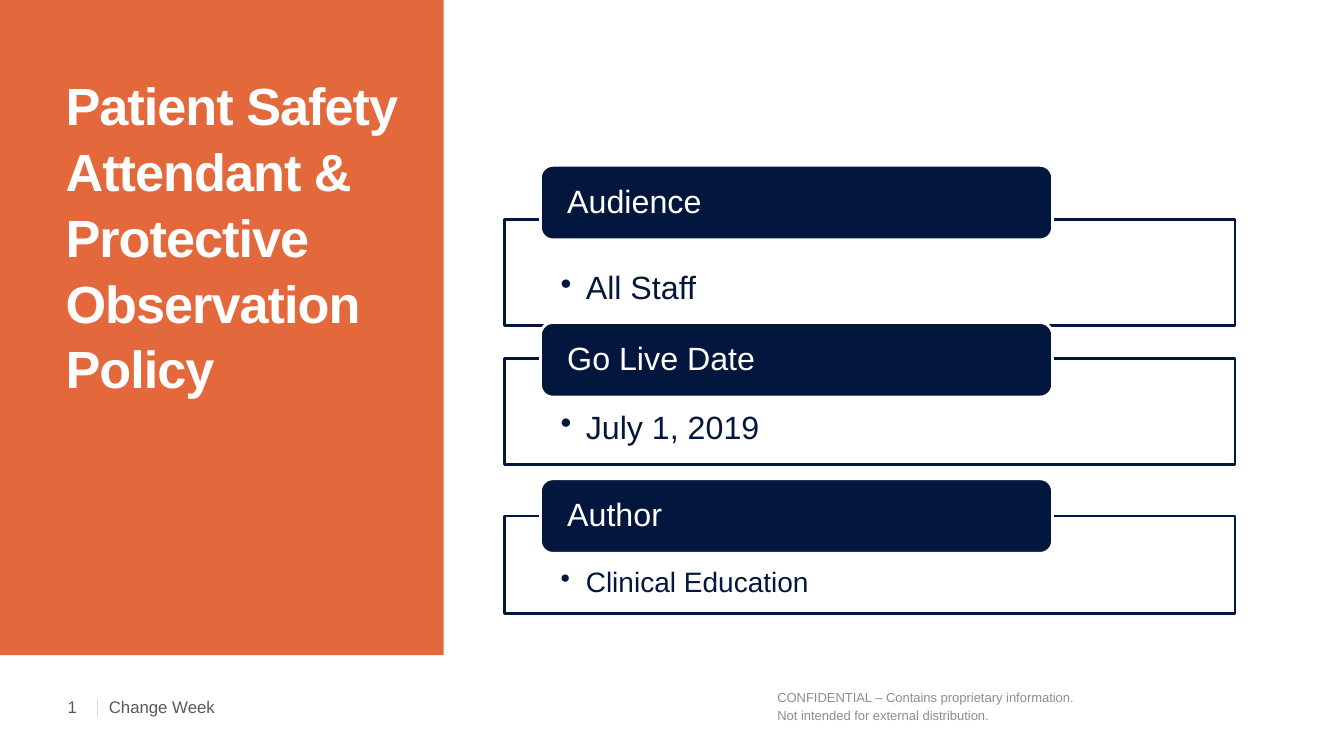
from lxml import etree
from pptx import Presentation
from pptx.dml.color import RGBColor
from pptx.enum.shapes import MSO_CONNECTOR, MSO_SHAPE
from pptx.enum.text import MSO_ANCHOR, MSO_AUTO_SIZE, PP_ALIGN
from pptx.oxml.ns import qn
from pptx.util import Emu, Pt

RECTANGLE, ROUNDED = MSO_SHAPE.RECTANGLE, MSO_SHAPE.ROUNDED_RECTANGLE
STRAIGHT = MSO_CONNECTOR.STRAIGHT
TOP, MIDDLE = MSO_ANCHOR.TOP, MSO_ANCHOR.MIDDLE
LEFT, NO_FIT = PP_ALIGN.LEFT, MSO_AUTO_SIZE.NONE

PX = 9144  # 100 px to the inch
THEME = {
    "font": "Arial",
    "navy": RGBColor(0x03, 0x17, 0x3E),
    "orange": RGBColor(0xE0, 0x59, 0x29),
    "white": RGBColor(0xFF, 0xFF, 0xFF),
    "rule": RGBColor(0xD9, 0xD9, 0xD6),
    "footer": RGBColor(0x58, 0x59, 0x5B),
    "notice": RGBColor(0x8C, 0x8D, 0x8D),
    "title_size": 37.3,
    "card_size": 23,
    "small_card_size": 20,
    "footer_size": 12,
    "notice_size": 9.3,
}


def add_block(shape_type, place, fill, line=None, opacity=100):
    block = slide.shapes.add_shape(shape_type, *(Emu(n * PX) for n in place))
    block.shadow.inherit = False
    block.fill.solid()
    block.fill.fore_color.rgb = THEME[fill]
    if opacity < 100:
        color = block.fill._xPr.find(".//" + qn("a:srgbClr"))
        etree.SubElement(color, qn("a:alpha"), val=str(opacity * 1000))
    if line:
        block.line.color.rgb = THEME[line]
        block.line.width = Pt(2)
    else:
        block.line.fill.background()
    return block


def write(box, lines, size, color, insets=(0, 0, 0, 0), anchor=TOP,
          spacing=1.0, wrap=True, bold=None, bullet=False):
    frame = box.text_frame
    frame.auto_size = NO_FIT
    frame.word_wrap = wrap
    frame.vertical_anchor = anchor
    (frame.margin_left, frame.margin_top,
     frame.margin_right, frame.margin_bottom) = (Emu(n * PX) for n in insets)
    frame.text = "\n".join(lines)
    for para in frame.paragraphs:
        para.alignment = LEFT
        para.line_spacing = spacing
        if bullet:
            properties = para._p.get_or_add_pPr()
            properties.set("marL", str(25 * PX))
            properties.set("indent", str(-25 * PX))
            etree.SubElement(properties, qn("a:buChar"), char="•")
        para.font.name = THEME["font"]
        para.font.size = Pt(THEME[size])
        para.font.color.rgb = THEME[color]
        para.font.bold = bold


deck = Presentation()
deck.slide_width, deck.slide_height = Emu(1333 * PX), Emu(750 * PX)
slide = deck.slides.add_slide(deck.slide_layouts[5])

# Orange panel with the title in front of it
add_block(RECTANGLE, (0, 0, 440, 650), "orange", opacity=90)
title = slide.shapes.title
title.left, title.top, title.width, title.height = (
    Emu(n * PX) for n in (65, 70, 342, 570))
write(title, ["Patient Safety Attendant & Protective Observation Policy"],
      "title_size", "white", spacing=1.05, bold=True)
for span in title.text_frame.paragraphs[0].runs:
    span.font._element.set("spc", "-70")
slide.shapes._spTree.append(title._element)

# Cards: outlined body with a heading tab over its top edge
TAB_TOP, TAB_STEP = 164, 155.5
cards = [
    ("Audience", "All Staff", 218, 105, "card_size"),
    ("Go Live Date", "July 1, 2019", 356, 105, "card_size"),
    ("Author", "Clinical Education", 512, 97, "small_card_size"),
]
for index, (heading, detail, top, height, size) in enumerate(cards):
    body = add_block(RECTANGLE, (500, top, 725, height), "white", "navy", 90)
    write(body, [detail], size, "navy", (56, 52, 56, 16), spacing=0.9, bullet=True)
    tab_top = round(TAB_TOP + index * TAB_STEP)
    tab = add_block(ROUNDED, (536, tab_top, 508, 74), "navy", "white")
    write(tab, [heading], "card_size", "white", (23, 0, 23, 0), MIDDLE, 0.9)

# Footer: page number, divider, deck name and notice
divider = slide.shapes.add_connector(
    STRAIGHT, *(Emu(n * PX) for n in (97, 693, 97, 711)))
divider.line.color.rgb = THEME["rule"]
divider.line.width = Pt(0.75)
etree.SubElement(divider._element.spPr, qn("a:effectLst"))

footer_style = dict(size="footer_size", color="footer", insets=(0, 5, 0, 5),
                    anchor=MIDDLE, wrap=False)
notice_style = dict(size="notice_size", color="notice", spacing=1.1)
notice = ["CONFIDENTIAL – Contains proprietary information.",
          "Not intended for external distribution."]
for place, lines, style in [
    ((67, 688, 36, 27), ["1"], footer_style),
    ((108, 688, 494, 27), ["Change Week"], footer_style),
    ((771, 683, 342, 36), notice, notice_style),
]:
    box = slide.shapes.add_textbox(*(Emu(n * PX) for n in place))
    write(box, lines, **style)

deck.save("out.pptx")
